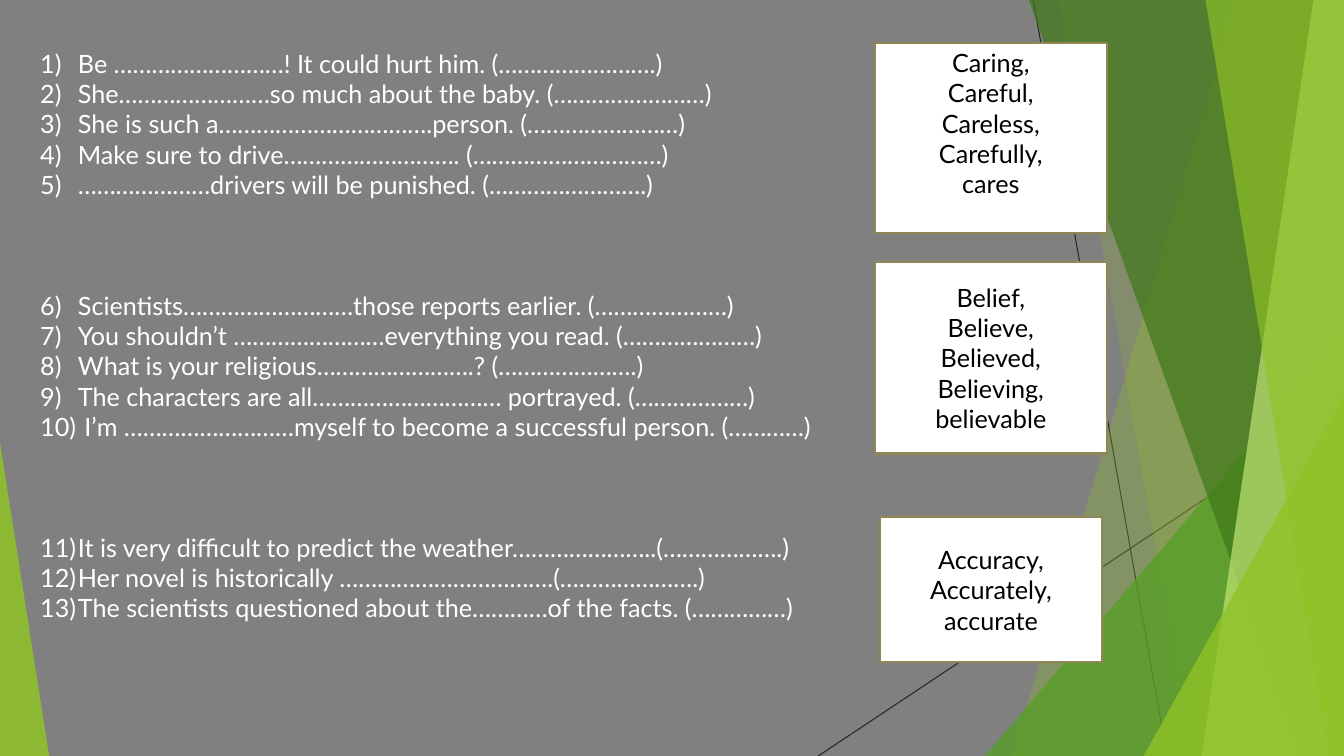
from lxml import etree
from pptx import Presentation
from pptx.dml.color import RGBColor as RGB
from pptx.enum.shapes import MSO_CONNECTOR as LINK, MSO_SHAPE as SHAPE
from pptx.enum.text import MSO_ANCHOR as ANCHOR, MSO_AUTO_SIZE as AUTO, PP_ALIGN as ALIGN
from pptx.oxml.ns import qn
from pptx.util import Cm, Pt

GREY = RGB(0x80, 0x80, 0x80)
WHITE = RGB(0xFF, 0xFF, 0xFF)
BLACK = RGB(0, 0, 0)
INK = RGB(0x26, 0x26, 0x26)
TAN = RGB(0x91, 0x86, 0x55)
LIME = RGB(0x90, 0xC2, 0x26)
LEAF = RGB(0x54, 0xA0, 0x21)
MOSS = RGB(0x3F, 0x78, 0x19)
PALE = RGB(0xC0, 0xE4, 0x74)

FONT = "Lato"
SIZE = Pt(18)
GAP = Pt(64.8)  # three lines between groups
WIDE, HIGH = 33.87, 19.05

GROUPS = [
    ["Be ………………………! It could hurt him. (…………………….)",
     "She……………………so much about the baby. (……………………)",
     "She is such a…………………………….person. (……………………)",
     "Make sure to drive………………………. (…………………………)",
     "…………………drivers will be punished. (…………………….)"],
    ["Scientists………………………those reports earlier. (…………………)",
     "You shouldn’t ……………………everything you read. (…………………)",
     "What is your religious…………………….? (………………….)",
     "The characters are all………………………… portrayed. (………………)",
     " I’m ………………………myself to become a successful person. (…………)"],
    ["It is very difficult to predict the weather…………………..(……………….)",
     "Her novel is historically …………………………….(………………….)",
     "The scientists questioned about the…………of the facts. (……………)"],
]

# Box, bottom margin and words of each bank
BANKS = [
    ((22.05, 1.09, 5.84, 4.78), 0.76,
     ["Caring,", "Careful,", "Careless,", "Carefully,", "cares"]),
    ((22.05, 6.6, 5.84, 4.83), 0,
     ["Belief,", "Believe,", "Believed,", "Believing,", "believable"]),
    ((22.17, 13.03, 5.61, 3.66), 0,
     ["Accuracy,", "Accurately,", "accurate"]),
]


def add_run(par, text, color):
    run = par.add_run()
    run.text = text
    run.font.name, run.font.size = FONT, SIZE
    run.font.color.rgb = color


def tint(shape, color, alpha):
    """Fill with a see-through colour; alpha is in percent."""
    shape.shadow.inherit = False
    shape.line.fill.background()
    shape.fill.solid()
    shape.fill.fore_color.rgb = color
    tone = shape.fill._xPr.find(".//" + qn("a:srgbClr"))
    etree.SubElement(tone, qn("a:alpha"), val=str(alpha * 1000))


def add_ray(slide, start, end):
    line = slide.shapes.add_connector(
        LINK.STRAIGHT, *(Cm(v) for v in start + end))
    line.line.color.rgb = INK
    line.line.width = Pt(0.75)
    etree.SubElement(line._element.spPr, qn("a:effectLst"))


def add_blade(slide, box, top, foot, color, alpha):
    """Draw a full-height band from a slanted left edge to the box's right."""
    x, y, w, h = box
    pen = slide.shapes.build_freeform(Cm(x + top), Cm(y))
    pen.add_line_segments([(Cm(x + w), Cm(y)), (Cm(x + w), Cm(y + h)),
                           (Cm(x + foot), Cm(y + h))])
    tint(pen.convert_to_shape(), color, alpha)


def add_wedge(slide, box, w, h, apex, color, alpha):
    """Set a right triangle in a lower corner: apex 0 is left, 1 is right."""
    x, y, full, high = box
    wedge = slide.shapes.add_shape(
        SHAPE.ISOSCELES_TRIANGLE, Cm(x + apex * (full - w)),
        Cm(y + high - h), Cm(w), Cm(h))
    wedge.adjustments[0] = apex
    tint(wedge, color, alpha)


def add_decor(slide, box):
    x, y, w, h = box
    add_ray(slide, (x + 26.04, y), (x + 29.41, y + h))
    add_ray(slide, (x + w, y + 10.24), (x + 20.62, y + h))
    add_blade(slide, box, 31.19, 25.5, LIME, 30)
    add_blade(slide, box, 26.67, 30.05, LIME, 20)
    add_wedge(slide, box, 9.05, 10.59, 1, LEAF, 72)
    add_blade(slide, box, 25.93, 32.79, MOSS, 70)
    add_blade(slide, box, 33.1, 30.28, PALE, 70)
    add_blade(slide, box, 30.38, 33.48, LIME, 65)
    add_wedge(slide, box, 5.05, 9.07, 1, LIME, 80)
    add_wedge(slide, box, 1.24, 7.9, 0, LIME, 85)


def add_list(slide, box):
    body = slide.placeholders[1]
    body.left, body.top, body.width, body.height = (Cm(v) for v in box)
    frame = body.text_frame
    frame.auto_size = AUTO.NONE
    frame.vertical_anchor = ANCHOR.TOP
    for g, group in enumerate(GROUPS):
        for i, text in enumerate(group):
            first = g == i == 0
            par = frame.paragraphs[0] if first else frame.add_paragraph()
            par.line_spacing = 1.0
            par.space_before = GAP if g and i == 0 else Pt(0)
            par.space_after = Pt(0)
            props = par._p.get_or_add_pPr()
            props.set("marL", str(Cm(0.95)))
            props.set("indent", str(Cm(-0.95)))
            etree.SubElement(props, qn("a:buFont"), typeface="+mj-lt")
            etree.SubElement(props, qn("a:buAutoNum"), type="arabicParenR")
            add_run(par, text, WHITE)


def add_bank(slide, box, foot, words):
    bank = slide.shapes.add_shape(SHAPE.RECTANGLE, *(Cm(v) for v in box))
    bank.shadow.inherit = False
    bank.fill.solid()
    bank.fill.fore_color.rgb = WHITE
    bank.line.color.rgb = TAN
    bank.line.width = Pt(1.5)
    frame = bank.text_frame
    frame.word_wrap = True
    frame.vertical_anchor = ANCHOR.MIDDLE
    frame.margin_top, frame.margin_bottom = 0, Cm(foot)
    for i, word in enumerate(words):
        par = frame.add_paragraph() if i else frame.paragraphs[0]
        par.alignment = ALIGN.CENTER
        add_run(par, word, BLACK)


def main():
    deck = Presentation()
    deck.slide_width, deck.slide_height = Cm(WIDE), Cm(HIGH)
    slide = deck.slides.add_slide(deck.slide_layouts[1])
    slide.background.fill.solid()
    slide.background.fill.fore_color.rgb = GREY
    title = slide.shapes.title._element
    title.getparent().remove(title)
    add_decor(slide, (0, 0, WIDE, HIGH))
    add_list(slide, (0.76, 1.09, 20.93, 17.96))
    for box, foot, words in BANKS:
        add_bank(slide, box, foot, words)
    deck.save("out.pptx")


if __name__ == "__main__":
    main()
